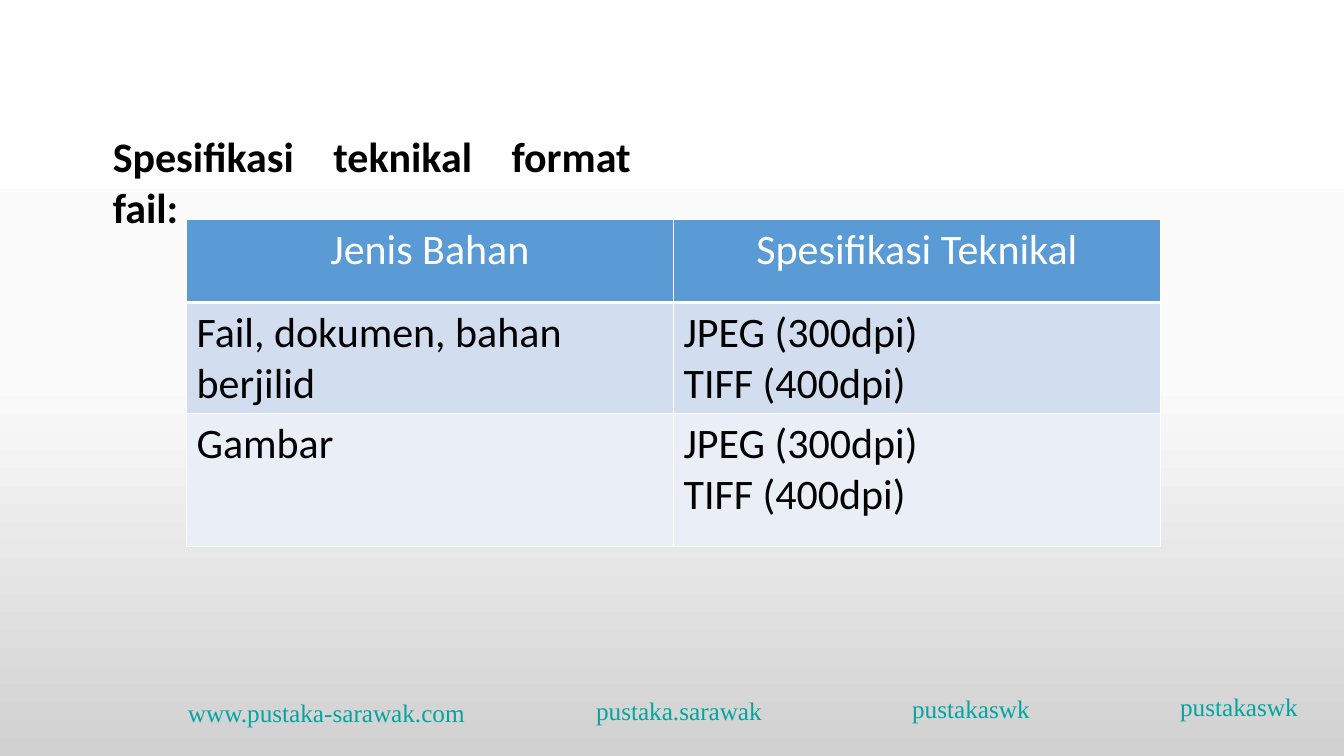
from lxml import etree
from pptx import Presentation
from pptx.dml.color import RGBColor
from pptx.enum import text
from pptx.oxml import ns
from pptx.util import Inches, Pt

WHITE = RGBColor(0xFF, 0xFF, 0xFF)
BLACK = RGBColor(0, 0, 0)
TEAL = RGBColor(0x04, 0xA5, 0xA0)
HEADER_BLUE = RGBColor(0x5B, 0x9B, 0xD5)
ROW_FILLS = [HEADER_BLUE, RGBColor(0xD2, 0xDE, 0xEF), RGBColor(0xEA, 0xEF, 0xF7)]
BACKGROUND_STOPS = [(0, WHITE), (50, RGBColor(0xFB, 0xFB, 0xFB)),
                    (100, RGBColor(0xD1, 0xD1, 0xD1))]

LEFT, CENTER, RIGHT, JUSTIFY = (text.PP_ALIGN.LEFT, text.PP_ALIGN.CENTER,
                                text.PP_ALIGN.RIGHT, text.PP_ALIGN.JUSTIFY)
BODY = {"name": "Calibri", "size": Pt(30), "bold": False}
HEADING = {**BODY, "bold": True}
CONTACT = {"name": "Times New Roman", "size": Pt(18)}

FORMATS = "JPEG (300dpi)\nTIFF (400dpi)"
TABLE_ROWS = [("Jenis Bahan", "Spesifikasi Teknikal"),
              ("Fail, dokumen, bahan berjilid", FORMATS),
              ("Gambar", FORMATS)]
ROW_HEIGHTS = [0.82, 1.03, 1.32]

# Wording, left, top, width, alignment
CONTACTS = [("www.pustaka-sarawak.com", 1.71, 6.87, 3, RIGHT),
            ("pustaka.sarawak", 5.63, 6.85, 2.21, CENTER),
            ("pustakaswk", 8.77, 6.83, 1.72, CENTER),
            ("pustakaswk", 11.51, 6.81, 1.46, RIGHT)]


def add_xml(parent, tag, **attributes):
    return etree.SubElement(parent, ns.qn(tag), attributes)


def write(frame, wording, align, color, font_format):
    frame.word_wrap = True
    frame.text = wording
    for para in frame.paragraphs:
        para.alignment = align
        for span in para.runs:
            span.font.color.rgb = color
            for name, value in font_format.items():
                setattr(span.font, name, value)


def add_text(page, box, *content):
    frame = page.shapes.add_textbox(*map(Inches, box)).text_frame
    write(frame, *content)
    return frame


def paint_background(page):
    fill = page.background.fill
    fill.gradient()
    fill.gradient_angle = 270  # top to bottom
    stops = page.element.find(".//" + ns.qn("a:gsLst"))
    for stop in list(stops):
        stops.remove(stop)
    for percent, color in BACKGROUND_STOPS:
        stop = add_xml(stops, "a:gs", pos=str(percent * 1000))
        add_xml(stop, "a:srgbClr", val=str(color))


def add_heading(page, box):
    frame = add_text(page, box, "Spesifikasi teknikal format fail: ",
                     JUSTIFY, BLACK, HEADING)
    frame.paragraphs[0]._p.get_or_add_pPr().set("marL", str(Inches(0.25)))


def set_borders(cell, is_header, is_below_header):
    properties = cell._tc.get_or_add_tcPr()
    widths = {"L": 1, "R": 1, "T": 3 if is_below_header else 1,
              "B": 3 if is_header else 1}
    for position, (side, points) in enumerate(widths.items()):
        line = etree.Element(ns.qn(f"a:ln{side}"), w=str(Pt(points)))
        add_xml(add_xml(line, "a:solidFill"), "a:srgbClr", val=str(WHITE))
        properties.insert(position, line)


def add_format_table(page, box):
    frame = page.shapes.add_table(len(TABLE_ROWS), 2, *map(Inches, box))
    table = frame.table
    for column in table.columns:
        column.width = Inches(box[2] / 2)
    for index, (wordings, height) in enumerate(zip(TABLE_ROWS, ROW_HEIGHTS)):
        is_header = index == 0
        table.rows[index].height = Inches(height)
        for cell, wording in zip(table.rows[index].cells, wordings):
            cell.fill.solid()
            cell.fill.fore_color.rgb = ROW_FILLS[index]
            write(cell.text_frame, wording, CENTER if is_header else LEFT,
                  WHITE if is_header else BLACK, BODY)
            set_borders(cell, is_header, index == 1)


def add_contacts(page):
    for wording, left, top, width, align in CONTACTS:
        add_text(page, (left, top, width, 0.4), wording, align, TEAL, CONTACT)


def main():
    deck = Presentation()
    deck.slide_width, deck.slide_height = Inches(13.33), Inches(7.5)
    page = deck.slides.add_slide(deck.slide_layouts[6])
    paint_background(page)
    add_contacts(page)
    add_format_table(page, (1.85, 2.18, 9.66, sum(ROW_HEIGHTS)))
    add_heading(page, (0.77, 1.25, 5.59, 0.6))
    deck.save("out.pptx")


if __name__ == "__main__":
    main()
